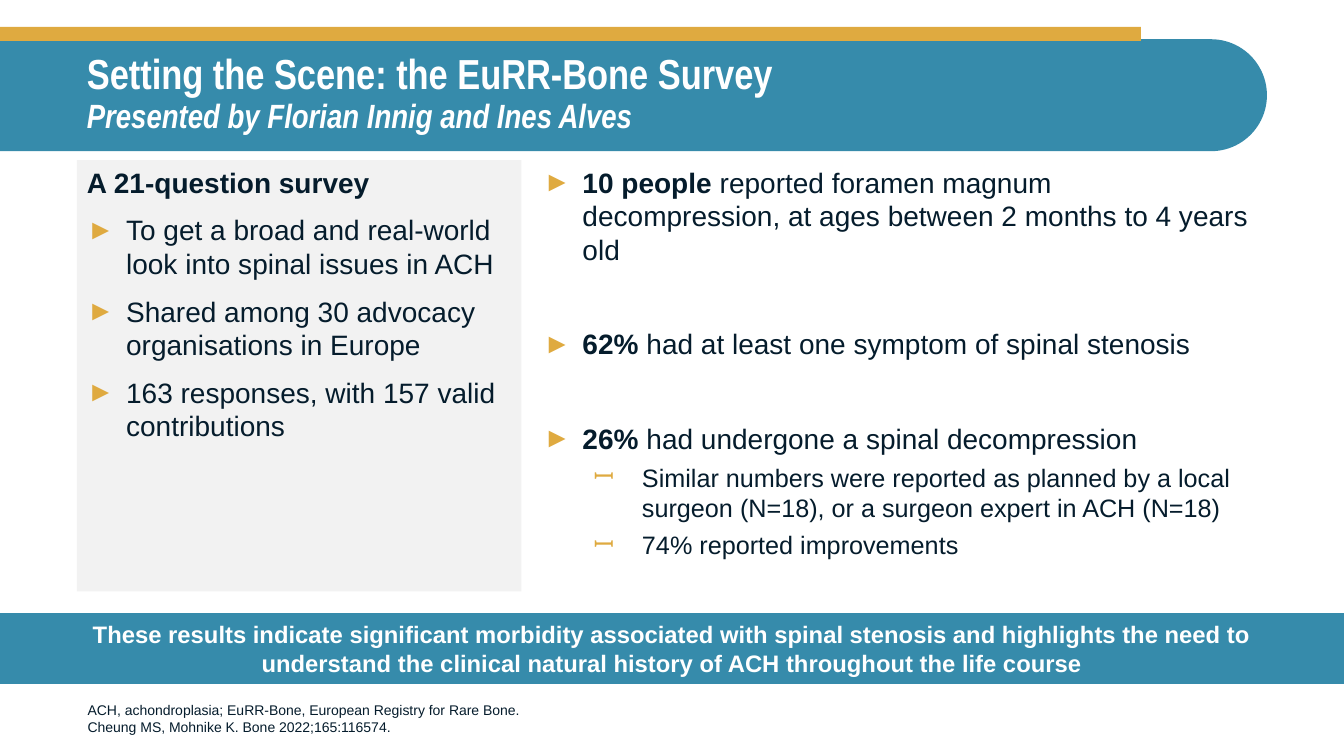
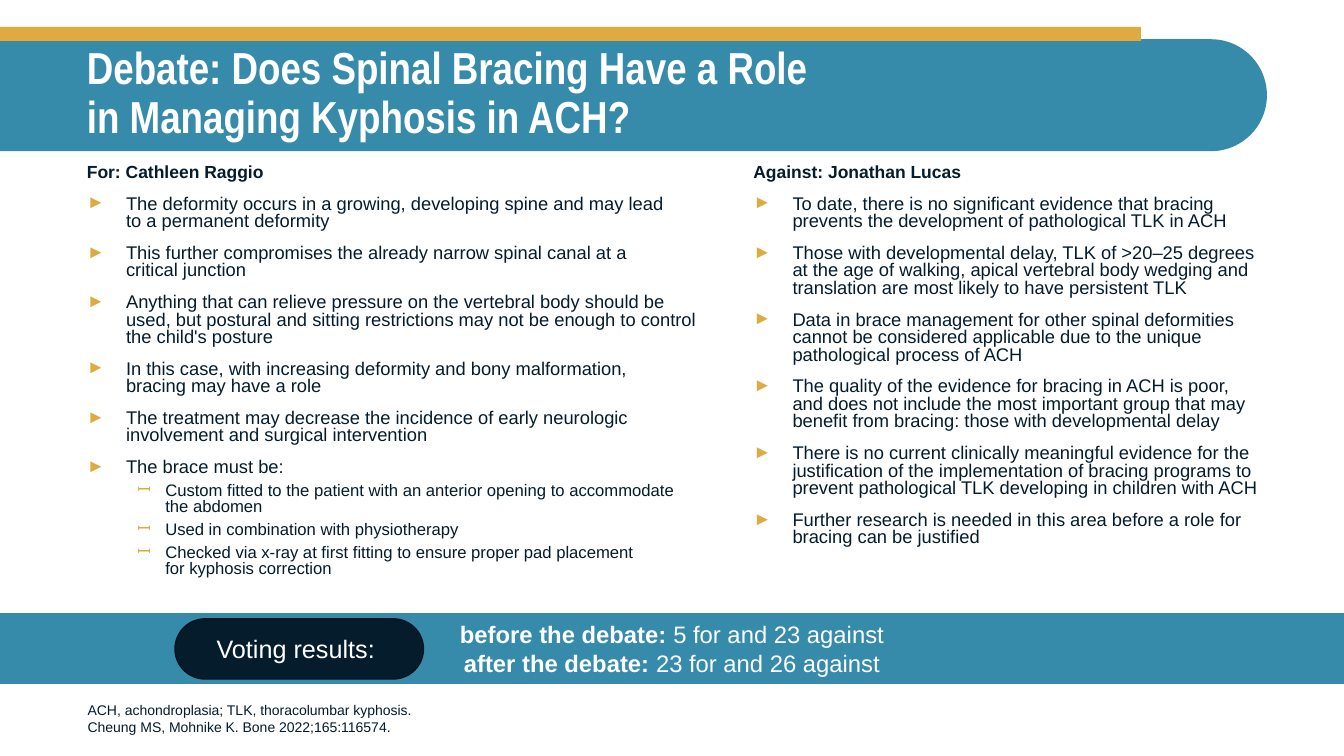
import pptx
import pptx.util
import pptx.dml.color
import pptx.enum.shapes
import pptx.enum.text
from dataclasses import dataclass, replace
from lxml import etree

Pt = pptx.util.Pt
Kind = pptx.enum.shapes.MSO_SHAPE
Align = pptx.enum.text.PP_ALIGN
Anchor = pptx.enum.text.MSO_ANCHOR


class Theme:
    teal, gold, navy, edge = "368BAB", "DFAA40", "051C2C", "041521"
    grey, white = "F2F2F2", "FFFFFF"
    sans, slim = "Arial", "Arial Narrow"
    title, lead, sub, body, small = 32, 30, 24, 20, 18
    band, note = 17, 10
    head, point, minor = 12.5, 13.1, 11.9


@dataclass
class Style:
    size: float
    color: str = Theme.navy
    bold: bool = False
    ital: bool = False
    face: str = Theme.sans
    align: int = Align.LEFT
    before: float = 0
    lines: float = 1
    left: float = 0
    hang: float = 0
    mark: str = ""


head = Style(Theme.body, bold=True, before=10)
dot = Style(Theme.body, before=10, left=28, hang=28, mark="►")
dash = Style(Theme.small, before=5, left=70.5, hang=34.5, mark="ꟷ")
title = Style(Theme.title, Theme.white, True, face=Theme.slim, lines=0.9)
band = Style(Theme.band, Theme.white, align=Align.CENTER)

styles = {
    "title": title,
    "lead": replace(title, size=Theme.lead),
    "sub": replace(title, size=Theme.sub, ital=True),
    "head": head,
    "dot": dot,
    "far": replace(dot, before=43.5),
    "dash": dash,
    "head2": replace(head, size=Theme.head, lines=0.8),
    "dot2": replace(dot, size=Theme.point, lines=0.8),
    "dash2": replace(dash, size=Theme.minor, lines=0.8, left=56, hang=20),
    "band": band,
    "pill": replace(band, size=Theme.small),
    "note": Style(Theme.note),
}

cite = "Cheung MS, Mohnike K. Bone 2022;165:116574."

survey = {
    "title": [
        ("lead", "Setting the Scene: the EuRR-Bone Survey"),
        ("sub", "Presented by Florian Innig and Ines Alves"),
    ],
    "cols": [
        ((55, 114.5, 317.5, 308), Theme.grey, [
            ("head", "A 21-question survey"),
            ("dot", "To get a broad and real-world look into spinal issues in ACH"),
            ("dot", "Shared among 30 advocacy organisations in Europe"),
            ("dot", "163 responses, with 157 valid contributions"),
        ]),
        ((381, 114.5, 524, 308), None, [
            ("dot", "**10 people **reported foramen magnum decompression, "
                    "at ages between 2 months to 4 years old"),
            ("far", "**62% **had at least one symptom of spinal stenosis"),
            ("far", "**26% **had undergone a spinal decompression"),
            ("dash", "Similar numbers were reported as planned by a local "
                     "surgeon (N=18), or a surgeon expert in ACH (N=18)"),
            ("dash", "74% reported improvements"),
        ]),
    ],
    "band": [
        ("band", "**These results indicate significant morbidity associated with "
                 "spinal stenosis and highlights the need to understand the "
                 "clinical natural history of ACH throughout the life course**"),
    ],
    "pill": [],
    "note": [
        ("note", "ACH, achondroplasia; EuRR-Bone, European Registry for Rare Bone."),
        ("note", cite),
    ],
}

debate = {
    "title": [
        ("title", "Debate: Does Spinal Bracing Have a Role\nin Managing Kyphosis in ACH?"),
    ],
    "cols": [
        ((55, 114.5, 463, 330), None, [
            ("head2", "For: Cathleen Raggio"),
            ("dot2", "The deformity occurs in a growing, developing spine and may lead\n"
                     "to a permanent deformity"),
            ("dot2", "This further compromises the already narrow spinal canal at a\n"
                     "critical junction"),
            ("dot2", "Anything that can relieve pressure on the vertebral body should be\n"
                     "used, but postural and sitting restrictions may not be enough "
                     "to control the child's posture"),
            ("dot2", "In this case, with increasing deformity and bony malformation,\n"
                     "bracing may have a role"),
            ("dot2", "The treatment may decrease the incidence of early neurologic "
                     "involvement and surgical intervention"),
            ("dot2", "The brace must be:"),
            ("dash2", "Custom fitted to the patient with an anterior opening to accommodate\n"
                      "the abdomen"),
            ("dash2", "Used in combination with physiotherapy"),
            ("dash2", "Checked via x-ray at first fitting to ensure proper pad placement\n"
                      "for kyphosis correction"),
        ]),
        ((531, 114.5, 374.5, 330), None, [
            ("head2", "Against: Jonathan Lucas"),
            ("dot2", "To date, there is no significant evidence that bracing prevents "
                     "the development of pathological TLK in ACH"),
            ("dot2", "Those with developmental delay, TLK of >20–25 degrees at the age "
                     "of walking, apical vertebral body wedging and translation are "
                     "most likely to have persistent TLK"),
            ("dot2", "Data in brace management for other spinal deformities cannot be "
                     "considered applicable due to the unique pathological process of ACH"),
            ("dot2", "The quality of the evidence for bracing in ACH is poor, and does "
                     "not include the most important group that may benefit from "
                     "bracing: those with developmental delay"),
            ("dot2", "There is no current clinically meaningful evidence for the "
                     "justification of the implementation of bracing programs to "
                     "prevent pathological TLK developing in children with ACH"),
            ("dot2", "Further research is needed in this area before a role for "
                     "bracing can be justified"),
        ]),
    ],
    "band": [
        ("band", "**before the debate: **5 for and 23 against\n"
                 "**after the debate: **23 for and 26 against"),
    ],
    "pill": [("pill", "Voting results: ")],
    "note": [
        ("note", "ACH, achondroplasia; TLK, thoracolumbar kyphosis."),
        ("note", cite),
    ],
}


def rgb(code):
    return pptx.dml.color.RGBColor.from_string(code)


def bullet(para, style):
    props = para._p.get_or_add_pPr()
    props.set("marL", str(Pt(style.left)))
    props.set("indent", str(-Pt(style.hang)))
    space = "{http://schemas.openxmlformats.org/drawingml/2006/main}"
    tint = etree.SubElement(props, space + "buClr")
    etree.SubElement(tint, space + "srgbClr", val=Theme.gold)
    etree.SubElement(props, space + "buFont", typeface=Theme.sans)
    etree.SubElement(props, space + "buChar", char=style.mark)


def write(shape, items, anchor=Anchor.TOP, side=7.2):
    frame = shape.text_frame
    frame.word_wrap = True
    frame.vertical_anchor = anchor
    frame.margin_left = frame.margin_right = Pt(side)
    for place, (kind, text) in enumerate(items):
        style = styles[kind]
        para = frame.add_paragraph() if place else frame.paragraphs[0]
        if style.mark:
            bullet(para, style)
        para.alignment = style.align
        para.line_spacing = style.lines
        para.space_before = Pt(style.before if place else 0)
        font = para.font
        font.name, font.size = style.face, Pt(style.size)
        font.bold, font.italic = style.bold, style.ital
        font.color.rgb = rgb(style.color)
        for turn, part in enumerate(text.split("**")):
            for row, line in enumerate(part.split("\n")):
                if row:
                    para.add_line_break()
                if line:
                    run = para.add_run()
                    run.text = line
                    if turn % 2:
                        run.font.bold = True


def block(slide, kind, area, fill, line=None):
    shape = slide.shapes.add_shape(kind, *map(Pt, area))
    shape.shadow.inherit = False
    shape.fill.solid()
    shape.fill.fore_color.rgb = rgb(fill)
    if line:
        shape.line.color.rgb = rgb(line)
        shape.line.width = Pt(1)
    else:
        shape.line.fill.background()
    return shape


def panel(slide, area, fill=None):
    if fill:
        return block(slide, Kind.RECTANGLE, area, fill)
    return slide.shapes.add_textbox(*map(Pt, area))


def banner(slide):
    wide, high, top = 905, 80, 28
    area = ((wide - high) / 2, top + (high - wide) / 2, high, wide)
    shape = block(slide, Kind.ROUND_2_SAME_RECTANGLE, area, Theme.teal)
    shape.rotation = 270
    shape.adjustments[0], shape.adjustments[1] = 0, 0.5
    block(slide, Kind.RECTANGLE, (0, 19.2, 815, 10), Theme.gold)


def build(deck, page):
    slide = deck.slides.add_slide(deck.slide_layouts[6])
    banner(slide)
    write(panel(slide, (55, 28, 850, 79)), page["title"], Anchor.MIDDLE)
    for area, fill, items in page["cols"]:
        write(panel(slide, area, fill), items)
    strip = panel(slide, (0, 438, 960, 50.5), Theme.teal)
    write(strip, page["band"], Anchor.MIDDLE, 57)
    if page["pill"]:
        area = (125, 442, 177.5, 43)
        pill = block(slide, Kind.ROUNDED_RECTANGLE, area, Theme.navy, Theme.edge)
        pill.adjustments[0] = 0.5
        write(pill, page["pill"], Anchor.MIDDLE)
    write(panel(slide, (55.5, 489, 711, 40)), page["note"], Anchor.BOTTOM)


def main():
    deck = pptx.Presentation()
    deck.slide_width, deck.slide_height = Pt(960), Pt(540)
    for page in (survey, debate):
        build(deck, page)
    deck.save("out.pptx")


if __name__ == "__main__":
    main()
